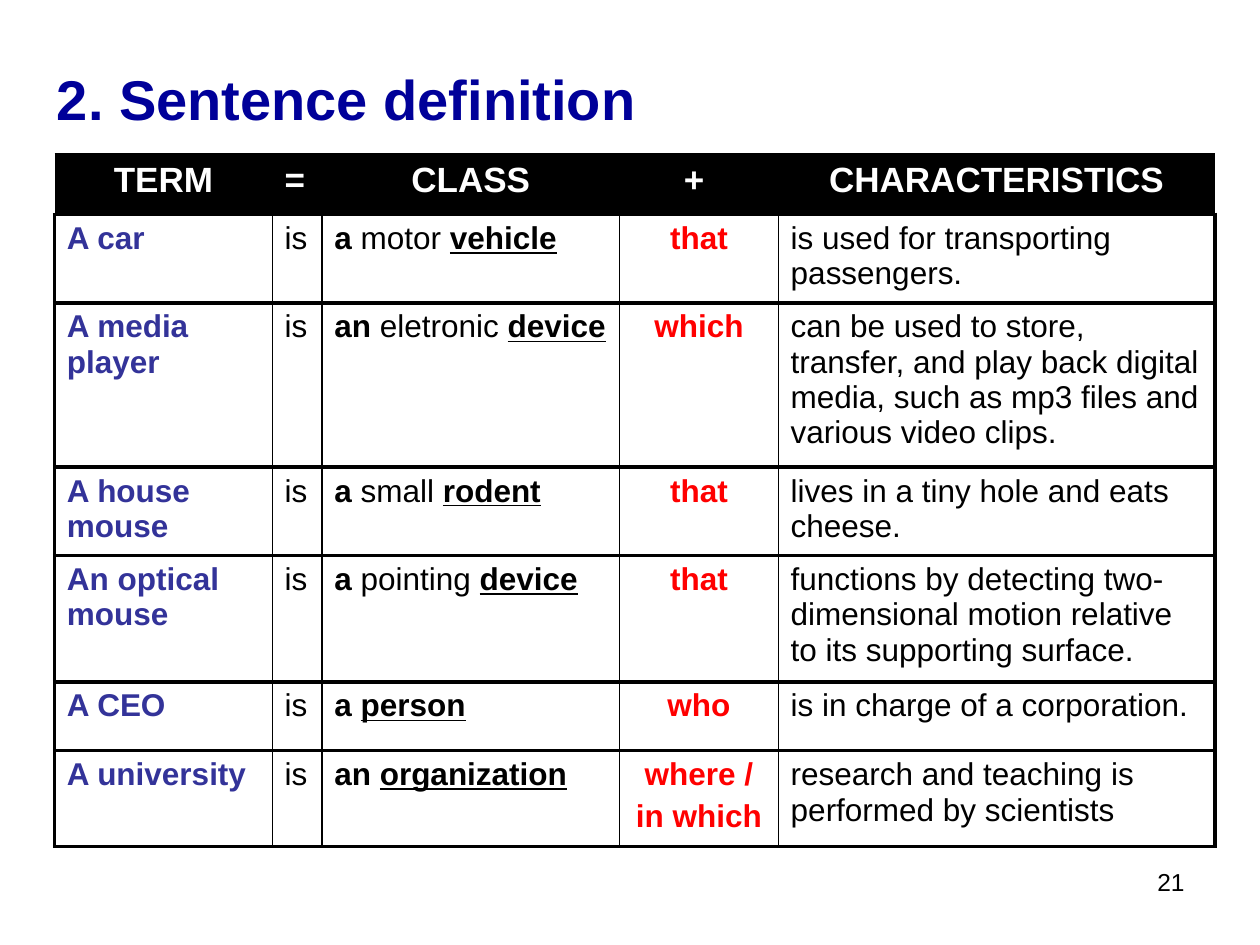
from lxml.etree import SubElement
from pptx import Presentation
from pptx.dml.color import RGBColor
from pptx.enum.text import MSO_ANCHOR, PP_ALIGN
from pptx.oxml.ns import qn
from pptx.util import Cm, Pt

BLACK = RGBColor(0, 0, 0)
WHITE = RGBColor(255, 255, 255)
NAVY = RGBColor(0, 0, 0x99)
INDIGO = RGBColor(0x33, 0x33, 0x99)
RED = RGBColor(255, 0, 0)

# Content
TITLE = "2. Sentence definition"
PAGE = "21"
HEADS = ["TERM", "=", "CLASS", "+ ", "CHARACTERISTICS"]
# term, (article, adjective, noun), linking words, characteristics
ROWS = [
    ("A car", ("a ", "motor ", "vehicle"), ["that"],
     "is used for transporting passengers."),
    ("A media player", ("an ", "eletronic ", "device"), ["which"],
     "can be used to store, transfer, and play back digital media, "
     "such as mp3 files and various video clips."),
    ("A house mouse", ("a ", "small ", "rodent"), ["that"],
     "lives in a tiny hole and eats cheese."),
    ("An optical mouse", ("a ", "pointing ", "device"), ["that"],
     "functions by detecting two-dimensional motion relative "
     "to its supporting surface."),
    ("A CEO", ("a ", "", "person"), ["who"],
     "is in charge of a corporation."),
    ("A university", ("an ", "", "organization"), ["where /", "in which"],
     "research and teaching is performed by scientists"),
]
WIDTHS = [4.39, 1, 6, 3.2, 8.8]
HEIGHTS = [1.2, 1.78, 3.3, 1.78, 2.54, 1.39, 1.93]
THIN, THICK = 1, 2.25


def write(par, text, size=18, color=BLACK, bold=False, line=False,
          align=PP_ALIGN.LEFT, gap=0):
    """Add one run of text to a paragraph."""
    par.alignment = align
    par.space_before = Pt(gap)
    run = par.add_run()
    run.text = text
    font = run.font
    font.name, font.size = "Arial", Pt(size)
    font.bold, font.underline = bold, line
    font.color.rgb = color


def add_box(slide, left, top, width, height, text, anchor, **style):
    box = slide.shapes.add_textbox(Cm(left), Cm(top), Cm(width), Cm(height))
    frame = box.text_frame
    frame.word_wrap = True
    frame.vertical_anchor = anchor
    write(frame.paragraphs[0], text, **style)


def set_edges(cell, **edges):
    """Draw cell borders; a width of 0 hides the edge."""
    props = cell._tc.get_or_add_tcPr()
    for spot, (side, width) in enumerate(edges.items()):
        edge = SubElement(props, qn(f"a:ln{side}"), w=str(int(Pt(width))))
        if width:
            fill = SubElement(edge, qn("a:solidFill"))
            SubElement(fill, qn("a:srgbClr"), val=str(BLACK))
        else:
            SubElement(edge, qn("a:noFill"))
        props.insert(spot, edge)


def fill_row(cells, term, kind, links, traits):
    first = [cell.text_frame.paragraphs[0] for cell in cells]
    write(first[0], term, color=INDIGO, bold=True)
    write(first[1], "is")
    article, adjective, noun = kind
    write(first[2], article, bold=True)
    if adjective:
        write(first[2], adjective)
    write(first[2], noun, bold=True, line=True)
    for n, word in enumerate(links):
        par = cells[3].text_frame.add_paragraph() if n else first[3]
        write(par, word, color=RED, bold=True, align=PP_ALIGN.CENTER,
              gap=3.6 if n else 0)
    write(first[4], traits)


def main():
    deck = Presentation()
    deck.slide_width, deck.slide_height = Cm(25.4), Cm(19.05)
    slide = deck.slides.add_slide(deck.slide_layouts[6])

    # Page number and title
    add_box(slide, 18.2, 17.35, 5.93, 1.32, PAGE, MSO_ANCHOR.TOP,
            size=14, align=PP_ALIGN.RIGHT)
    add_box(slide, 0.9, 1.12, 22.2, 1.7, TITLE, MSO_ANCHOR.MIDDLE,
            size=32, color=NAVY, bold=True)

    # Table grid
    table = slide.shapes.add_table(
        len(HEIGHTS), len(WIDTHS), Cm(1.1), Cm(3.12),
        Cm(sum(WIDTHS)), Cm(sum(HEIGHTS))).table
    table.first_row = table.horz_banding = False
    for col, width in zip(table.columns, WIDTHS):
        col.width = Cm(width)
    for row, height in zip(table.rows, HEIGHTS):
        row.height = Cm(height)

    # Fills and borders: thick outside, thin between columns
    last = len(WIDTHS) - 1
    for r, row in enumerate(table.rows):
        for c, cell in enumerate(row.cells):
            cell.margin_left = cell.margin_right = Cm(0.25)
            cell.margin_top = cell.margin_bottom = Cm(0.13)
            if r == 0:
                cell.fill.solid()
                cell.fill.fore_color.rgb = BLACK
                left = right = 0
            else:
                cell.fill.background()
                left = THICK if c == 0 else THIN
                right = THICK if c == last else THIN
            set_edges(cell, L=left, R=right, T=THICK, B=THICK)

    # Words
    for cell, head in zip(table.rows[0].cells, HEADS):
        side = PP_ALIGN.LEFT if head == "=" else PP_ALIGN.CENTER
        write(cell.text_frame.paragraphs[0], head, size=20, color=WHITE,
              bold=True, align=side)
    for n, data in enumerate(ROWS, 1):
        fill_row(list(table.rows[n].cells), *data)

    deck.save("out.pptx")


if __name__ == "__main__":
    main()
